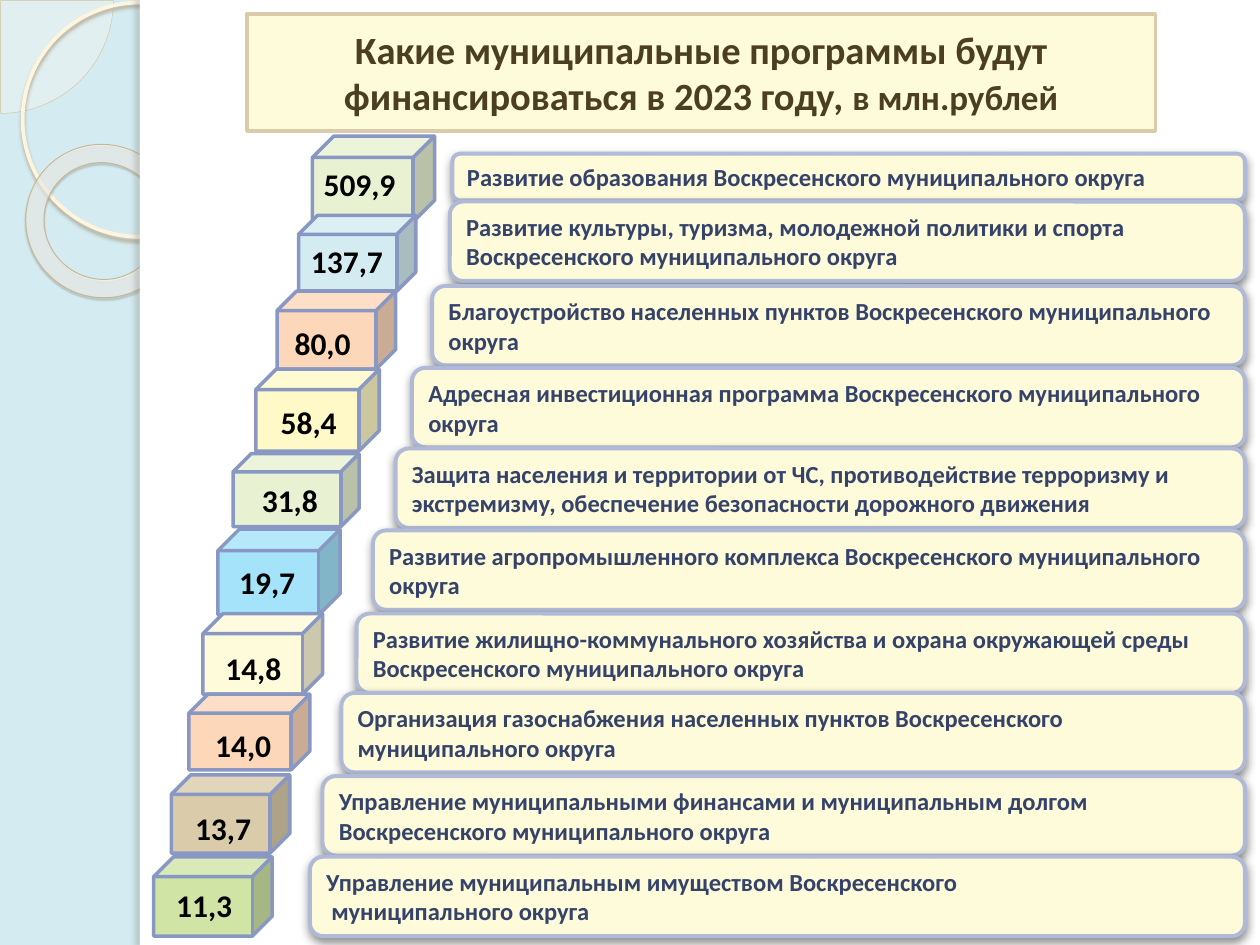
"""Builds a slide of municipal programmes and their 2023 funding."""
from lxml.etree import SubElement
from pptx import Presentation
from pptx.dml.color import RGBColor as RGB
from pptx.enum.shapes import MSO_SHAPE as SHAPE
from pptx.enum.text import MSO_ANCHOR as ANCHOR, MSO_AUTO_SIZE as AUTO, PP_ALIGN as ALIGN
from pptx.oxml.ns import qn
from pptx.util import Inches, Pt

FONT = "Calibri"
WHITE, BLACK = RGB(255, 255, 255), RGB(0, 0, 0)
SKY, CREAM = RGB(0xD4, 0xEB, 0xF1), RGB(0xFE, 0xFB, 0xDA)
SAND, BROWN = RGB(0xDA, 0xCC, 0xAB), RGB(0x4B, 0x3E, 0x21)
NAVY, EDGE, CUBE_EDGE = RGB(0x35, 0x43, 0x6A), RGB(0xB0, 0xBA, 0xD7), RGB(0x88, 0x98, 0xC3)
MINT, PEACH, LEMON = RGB(0xE8, 0xF2, 0xD3), RGB(0xFD, 0xD7, 0xBA), RGB(0xFE, 0xF9, 0xC6)
AZURE, GREEN = RGB(0xA4, 0xE3, 0xFA), RGB(0xD0, 0xE4, 0xA6)
IVORY, PEARL, RING = RGB(0xFE, 0xFA, 0xF4), RGB(0xFF, 0xFE, 0xFB), RGB(0xFF, 0xF5, 0xDE)
PIE_EDGE, DONUT_EDGE = RGB(0xD3, 0xC3, 0x9F), RGB(0xC7, 0xB8, 0x93)

COLUMNS, ROWS = 100, 75
PANEL_RIGHT = 98.8
PANEL_SHADOW = ("000000", 43, 5, 2, 90)

PROGRAMS = [
    ("509,9", MINT, (24.8, 10.8, 9.7, 6.8), (24.7, 12.6), (35.9, 12.2, 3.7),
     ["Развитие образования Воскресенского муниципального округа"]),
    ("137,7", SKY, (23.7, 17.1, 9.3, 6), (23.7, 18.7), (35.7, 16, 6.3),
     ["Развитие культуры, туризма, молодежной политики и спорта Воскресенского муниципального округа"]),
    ("80,0", PEACH, (22, 23.1, 9.4, 6.2), (22.4, 25.2), (34.3, 22.7, 6.3),
     ["Благоустройство населенных пунктов Воскресенского муниципального округа"]),
    ("58,4", LEMON, (20.3, 29.3, 9.8, 6.5), (21.3, 31.5), (32.7, 29.2, 6.3),
     ["Адресная инвестиционная программа Воскресенского муниципального округа"]),
    ("31,8", MINT, (18.5, 36, 10, 5.8), (19.8, 37.7), (31.4, 35.6, 6.3),
     ["Защита населения и территории от ЧС, противодействие терроризму и экстремизму, "
      "обеспечение безопасности дорожного движения"]),
    ("19,7", AZURE, (17.3, 42, 9.7, 6.8), (18, 44.2), (29.6, 42.1, 6.3),
     ["Развитие агропромышленного комплекса Воскресенского муниципального округа"]),
    ("14,8", CREAM, (16.1, 48.7, 9.5, 6.4), (16.9, 51), (28.3, 48.7, 6.3),
     ["Развитие жилищно-коммунального хозяйства и охрана окружающей среды "
      "Воскресенского муниципального округа"]),
    ("14,0", PEACH, (15, 55.1, 9.6, 6), (16.1, 57.1), (27.1, 55, 6.3),
     ["Организация газоснабжения населенных пунктов Воскресенского муниципального округа"]),
    ("13,7", SAND, (13.6, 61.5, 9.4, 6.2), (14.5, 63.7), (25.6, 61.6, 6.3),
     ["Управление муниципальными финансами и муниципальным долгом Воскресенского муниципального округа"]),
    ("11,3", GREEN, (12.2, 68, 9.4, 6.3), (13, 69.8), (24.6, 68, 6.3),
     ["Управление муниципальным имуществом Воскресенского", "муниципального округа"]),
]


def write(p, text, size=14, color=NAVY, align=ALIGN.LEFT):
    """Add a bold run to a paragraph."""
    p.alignment = align
    r = p.add_run()
    r.text = text
    r.font.name, r.font.size, r.font.bold = FONT, Pt(size), True
    r.font.color.rgb = color


class Deck:
    """Holds the presentation, its grid and the current slide."""

    def __init__(self):
        self.prs = Presentation()
        self.prs.slide_width, self.prs.slide_height = Inches(10), Inches(7.5)
        self.s = self.prs.slides.add_slide(self.prs.slide_layouts[5])
        self.s.background.fill.solid()
        self.s.background.fill.fore_color.rgb = SKY

    def place(self, x, y, w, h):
        """Turn columns and rows into slide lengths."""
        column, row = self.prs.slide_width / COLUMNS, self.prs.slide_height / ROWS
        return [round(n) for n in (x * column, y * row, w * column, h * row)]

    def paint(self, sp, fill=None, line=None, width=2.0):
        """Set the fill and the outline."""
        if fill is None:
            sp.fill.background()
        else:
            sp.fill.solid()
            sp.fill.fore_color.rgb = fill
        if line is None:
            sp.line.fill.background()
        else:
            sp.line.color.rgb, sp.line.width = line, Pt(width)

    def shape(self, kind, box, fill=None, line=None, width=2.0, alpha=None, shadow=None, adjust=()):
        """Add a preset shape."""
        sp = self.s.shapes.add_shape(kind, *self.place(*box))
        self.paint(sp, fill, line, width)
        sp.shadow.inherit = False
        for i, value in enumerate(adjust):
            sp.adjustments[i] = value
        if alpha:
            color = sp._element.spPr.find(qn("a:solidFill"))[0]
            SubElement(color, qn("a:alpha"), val=str(alpha * 1000))
        if shadow:
            self.cast(sp, *shadow)
        return sp

    def cast(self, sp, color, alpha, blur, distance, angle):
        """Give a shape an outer shadow."""
        effects = sp._element.spPr.find(qn("a:effectLst"))
        outer = SubElement(effects, qn("a:outerShdw"), blurRad=str(Pt(blur)), dist=str(Pt(distance)),
                           dir=str(angle * 60000), algn="ctr", rotWithShape="0")
        SubElement(SubElement(outer, qn("a:srgbClr"), val=color), qn("a:alpha"), val=str(alpha * 1000))

    def title(self, box, runs):
        """Format the title placeholder as a rounded banner."""
        sp = self.s.shapes.title
        sp.left, sp.top, sp.width, sp.height = self.place(*box)
        geometry = SubElement(sp._element.spPr, qn("a:prstGeom"), prst="roundRect")
        SubElement(geometry, qn("a:avLst"))
        self.paint(sp, CREAM, SAND)
        tf = sp.text_frame
        tf.word_wrap, tf.auto_size, tf.vertical_anchor = True, AUTO.NONE, ANCHOR.MIDDLE
        for text, size in runs:
            write(tf.paragraphs[0], text, size=size, color=BROWN, align=ALIGN.CENTER)
        self.s.shapes._spTree.append(sp._element)

    def panel(self, x, y, h, lines):
        """Add a programme name in a rounded panel."""
        sp = self.shape(SHAPE.ROUNDED_RECTANGLE, (x, y, PANEL_RIGHT - x, h), CREAM, EDGE, 2.25,
                        shadow=PANEL_SHADOW)
        tf = sp.text_frame
        tf.word_wrap, tf.vertical_anchor = True, ANCHOR.MIDDLE
        for i, line in enumerate(lines):
            p = tf.add_paragraph() if i else tf.paragraphs[0]
            if i:
                p._p.get_or_add_pPr().set("marL", str(Inches(0.04)))
            write(p, line)

    def label(self, x, y, text):
        """Add an amount in a text box."""
        tf = self.s.shapes.add_textbox(*self.place(x, y, 8, 4)).text_frame
        tf.word_wrap = True
        write(tf.paragraphs[0], text, size=18, color=BLACK)

    def decorate(self):
        """Draw the side ornament and the white page."""
        self.shape(SHAPE.PIE, (-8.9, -8.9, 17.9, 17.9), IVORY, PIE_EDGE, 0.25, alpha=33, adjust=(0, 54))
        self.shape(SHAPE.OVAL, (1.8, 0.2, 18.6, 18.6), line=RING, width=2.15,
                   shadow=("B0A68F", 85, 2, 2, 90))
        donut = self.shape(SHAPE.DONUT, (2, 11.5, 12.3, 12.1), PEARL, DONUT_EDGE, 0.58, alpha=55,
                           shadow=("5A5444", 35, 1, 1.2, 75), adjust=(0.12,))
        donut.rotation = 38.6
        self.shape(SHAPE.RECTANGLE, (11.1, 0, 88.9, ROWS), WHITE)
        self.shape(SHAPE.RECTANGLE, (11.1, 0, 0.8, ROWS), WHITE, shadow=("736F63", 25, 3, 3, 180))


def main():
    """Build and save the slide."""
    deck = Deck()
    deck.decorate()
    for _, color, cube, _, _, _ in PROGRAMS:
        deck.shape(SHAPE.CUBE, cube, color, CUBE_EDGE)
    deck.title((19.6, 1.1, 72.1, 9.3),
               [("Какие муниципальные программы будут финансироваться в 2023 году, ", 22),
                ("в млн.рублей", 20)])
    for amount, _, _, label, panel, lines in PROGRAMS:
        deck.panel(*panel, lines)
        deck.label(*label, amount)
    deck.prs.save("out.pptx")


if __name__ == "__main__":
    main()
